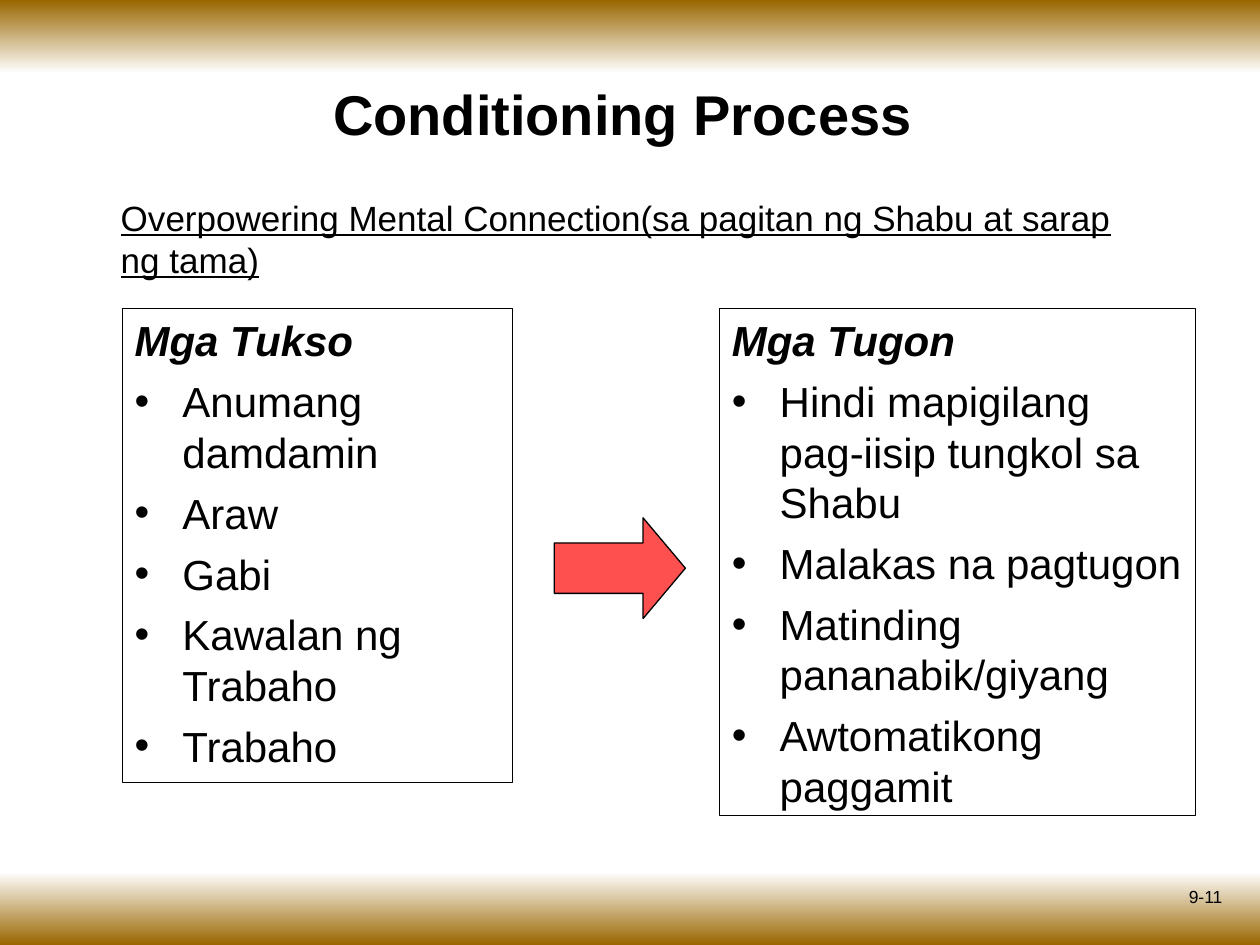
from dataclasses import dataclass

from lxml import etree
from pptx import Presentation
from pptx.dml.color import RGBColor
from pptx.enum.shapes import MSO_SHAPE
from pptx.enum.text import MSO_ANCHOR, PP_ALIGN
from pptx.oxml.ns import qn
from pptx.util import Inches, Pt

RECTANGLE, RIGHT_ARROW = MSO_SHAPE.RECTANGLE, MSO_SHAPE.RIGHT_ARROW
TOP, MIDDLE = MSO_ANCHOR.TOP, MSO_ANCHOR.MIDDLE
LEFT, CENTER, RIGHT = PP_ALIGN.LEFT, PP_ALIGN.CENTER, PP_ALIGN.RIGHT

FONT = "Arial"
BLACK, WHITE, BROWN, RED = "000000", "FFFFFF", "996600", "FF5050"
SLIDE_WIDTH, SLIDE_HEIGHT, BAND_HEIGHT = 10, 7.5, 0.58
PANEL_TOP = 2.45
BULLET_INDENT = Inches(0.38)


@dataclass(frozen=True)
class Band:
    top: float
    top_color: str
    bottom_color: str


@dataclass(frozen=True)
class Panel:
    left: float
    width: float
    height: float
    heading: str
    items: tuple[str, ...]


BANDS = (
    Band(SLIDE_HEIGHT - BAND_HEIGHT, WHITE, BROWN),
    Band(0, BROWN, WHITE),
)
PANELS = (
    Panel(0.97, 3.1, 3.76, "Mga Tukso",
          ("Anumang damdamin", "Araw", "Gabi", "Kawalan ng Trabaho", "Trabaho")),
    Panel(5.71, 3.78, 4.02, "Mga Tugon",
          ("Hindi mapigilang pag-iisip tungkol sa Shabu", "Malakas na pagtugon",
           "Matinding pananabik/giyang", "Awtomatikong paggamit")),
)


def color(value: str) -> RGBColor:
    return RGBColor.from_string(value)


def write(para, text: str, *, size: float, align=LEFT, bold=False,
          italic=False, underline=False) -> None:
    para.alignment = align
    span = para.add_run()
    span.text = text
    font = span.font
    font.name, font.size = FONT, Pt(size)
    font.bold, font.italic, font.underline = bold, italic, underline
    font.color.rgb = color(BLACK)


def add_bullet(para) -> None:
    para.level = 1
    para.space_before = Pt(6)
    properties = para._p.get_or_add_pPr()
    properties.set("marL", str(BULLET_INDENT))
    properties.set("indent", str(-BULLET_INDENT))
    etree.SubElement(properties, qn("a:buFont")).set("typeface", FONT)
    etree.SubElement(properties, qn("a:buChar")).set("char", "•")


def add_shape(page, kind, left: float, top: float, width: float, height: float):
    """Add a shape without shadow, with a thin black outline."""
    shape = page.shapes.add_shape(
        kind, Inches(left), Inches(top), Inches(width), Inches(height))
    shape.shadow.inherit = False
    shape.line.color.rgb = color(BLACK)
    shape.line.width = Pt(0.75)
    return shape


def add_band(page, band: Band) -> None:
    shape = add_shape(page, RECTANGLE, 0, band.top, SLIDE_WIDTH, BAND_HEIGHT)
    shape.line.fill.background()
    shape.fill.gradient()
    shape.fill.gradient_angle = 270
    stops = zip(shape.fill.gradient_stops, (band.top_color, band.bottom_color))
    for position, (stop, value) in enumerate(stops):
        stop.position = position
        stop.color.rgb = color(value)


def add_panel(page, panel: Panel) -> None:
    shape = add_shape(page, RECTANGLE, panel.left, PANEL_TOP, panel.width, panel.height)
    shape.fill.background()
    frame = shape.text_frame
    frame.word_wrap = True
    frame.vertical_anchor = TOP
    write(frame.paragraphs[0], panel.heading, size=24, bold=True, italic=True)
    for item in panel.items:
        para = frame.add_paragraph()
        add_bullet(para)
        write(para, item, size=24)


def add_text(page, text: str, left: float, top: float, width: float,
             height: float, **text_format) -> None:
    box = page.shapes.add_textbox(
        Inches(left), Inches(top), Inches(width), Inches(height))
    box.text_frame.word_wrap = True
    write(box.text_frame.paragraphs[0], text, **text_format)


def set_title(page, text: str) -> None:
    title = page.shapes.title
    title.left, title.top = Inches(0.86), Inches(0.58)
    title.width, title.height = Inches(8.29), Inches(0.64)
    title.text_frame.vertical_anchor = MIDDLE
    write(title.text_frame.paragraphs[0], text, size=32, align=CENTER, bold=True)


def add_arrow(page) -> None:
    arrow = add_shape(page, RIGHT_ARROW, 4.4, 4.11, 1.04, 0.8)
    arrow.adjustments[0], arrow.adjustments[1] = 0.5, 0.42
    arrow.fill.solid()
    arrow.fill.fore_color.rgb = color(RED)


def main() -> None:
    deck = Presentation()
    deck.slide_width, deck.slide_height = Inches(SLIDE_WIDTH), Inches(SLIDE_HEIGHT)
    page = deck.slides.add_slide(deck.slide_layouts[5])
    for band in BANDS:
        add_band(page, band)
    set_title(page, "Conditioning Process ")
    add_text(page, "9-11", 7.47, 6.98, 2.33, 0.52, size=10, align=RIGHT)
    add_text(page, "Overpowering Mental Connection(sa pagitan ng Shabu at sarap ng tama)",
             0.86, 1.51, 8.29, 0.77, size=20, underline=True)
    for panel in PANELS:
        add_panel(page, panel)
    add_arrow(page)
    deck.save("out.pptx")


if __name__ == "__main__":
    main()
